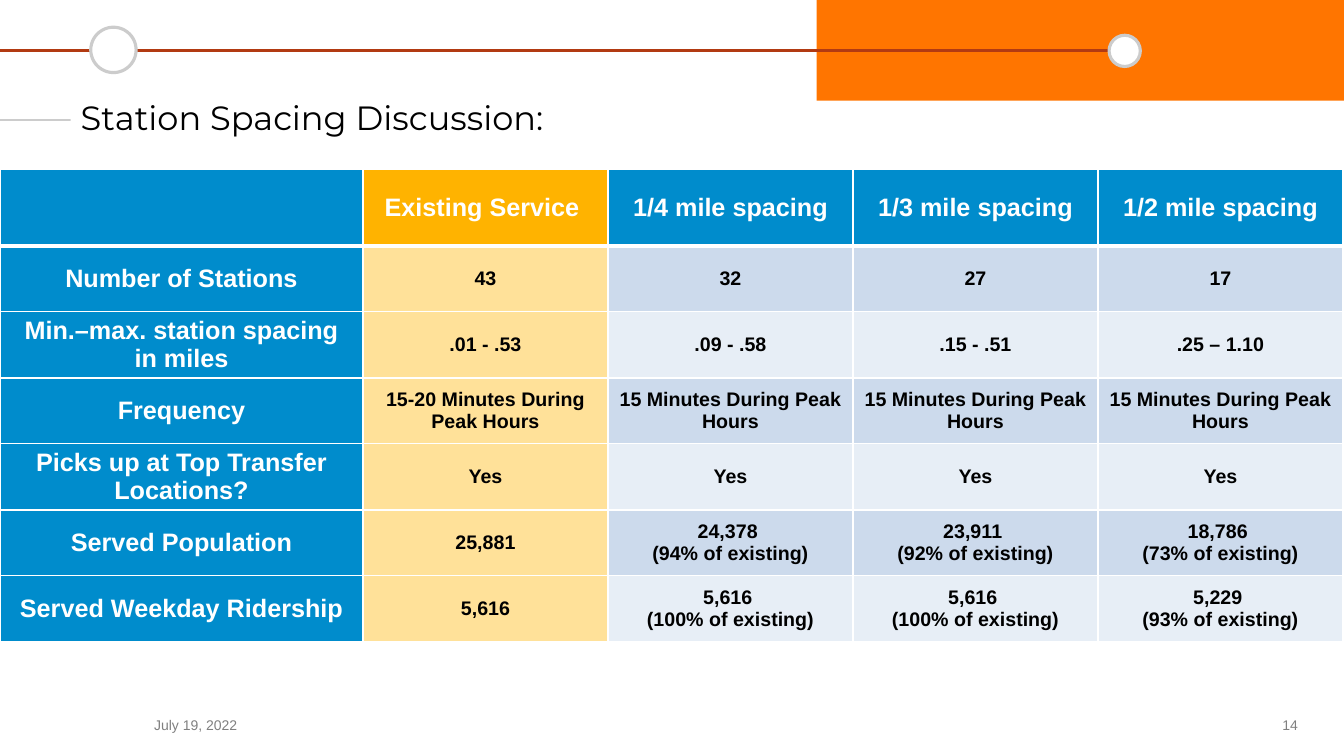
from pptx import Presentation
from pptx.dml.color import RGBColor
from pptx.enum.shapes import MSO_CONNECTOR, MSO_SHAPE
from pptx.enum.text import MSO_ANCHOR, MSO_AUTO_SIZE, PP_ALIGN
from pptx.oxml.ns import qn
from pptx.util import Emu, Pt
from lxml.etree import SubElement

PX = 9144  # 100 px to the inch
WHITE, BLACK, GREY, SILVER = "FFFFFF", "000000", "808080", "CCCCCC"
ORANGE, RUST = "FF7500", "B23A12"
BLUE, AMBER, PALE_AMBER = "008CCC", "FFB300", "FFE199"
BAND_FILLS = ["CCDAEC", "E7EEF6"]

COLUMN_WIDTHS = [360] + [243] * 4
ROW_HEIGHTS = [76] + [65] * 6
PEAK = "15 Minutes During Peak Hours"
ROWS = [
    ["", "Existing Service ", "1/4 mile spacing", "1/3 mile spacing", "1/2 mile spacing"],
    ["Number of Stations", "43", "32", "27", "17"],
    ["Min.–max. station spacing in miles", ".01 - .53", ".09 - .58", ".15 - .51", ".25 – 1.10"],
    ["Frequency", "15-20 Minutes During Peak Hours", PEAK, PEAK, PEAK],
    ["Picks up at Top Transfer Locations?", "Yes", "Yes", "Yes", "Yes"],
    ["Served Population", "25,881", "24,378 \n(94% of existing)",
     "23,911 \n(92% of existing)", "18,786 \n(73% of existing)"],
    ["Served Weekday Ridership", "5,616", "5,616 \n(100% of existing)",
     "5,616 \n(100% of existing)", "5,229 \n(93% of existing)"],
]


def px(*lengths):
    return [Emu(length * PX) for length in lengths]


def color(hex_string):
    return RGBColor.from_string(hex_string)


def apply_format(target, values):
    for name, value in values.items():
        setattr(target, name, value)


def cell_fill(row, column):
    if column == 0:
        return BLUE
    if row == 0:
        return AMBER if column == 1 else BLUE
    return PALE_AMBER if column == 1 else BAND_FILLS[(row - 1) % 2]


class SlideBuilder:
    font = "Arial"
    title_font = "Montserrat"

    def __init__(self, slide):
        self.slide = slide
        self.shapes = slide.shapes

    def set_text(self, frame, text, size, text_color, font=None, bold=False, **paragraph_format):
        apply_format(frame, {"text": text, "word_wrap": True,
                             "vertical_anchor": MSO_ANCHOR.MIDDLE})
        for paragraph in frame.paragraphs:
            apply_format(paragraph, paragraph_format)
            apply_format(paragraph.font, {"name": font or self.font, "size": Pt(size), "bold": bold})
            paragraph.font.color.rgb = color(text_color)

    def shape(self, kind, box, fill, line=None, width=2.25):
        shape = self.shapes.add_shape(kind, *px(*box))
        shape.shadow.inherit = False
        shape.fill.solid()
        shape.fill.fore_color.rgb = color(fill)
        if line:
            shape.line.color.rgb = color(line)
            shape.line.width = Pt(width)
        else:
            shape.line.fill.background()

    def line(self, start, end, line_color, width):
        connector = self.shapes.add_connector(MSO_CONNECTOR.STRAIGHT, *px(*start, *end))
        connector.line.color.rgb = color(line_color)
        connector.line.width = Pt(width)
        SubElement(connector._element.spPr, qn("a:effectLst"))

    def text(self, box, text, align):
        text_box = self.shapes.add_textbox(*px(*box))
        self.set_text(text_box.text_frame, text, 10, GREY, alignment=align)

    def title(self, box, text):
        title = self.shapes.title
        apply_format(title, dict(zip(("left", "top", "width", "height"), px(*box))))
        title.fill.solid()
        title.fill.fore_color.rgb = color(WHITE)
        self.set_text(title.text_frame, text, 24, BLACK, self.title_font,
                      alignment=PP_ALIGN.LEFT, line_spacing=0.9)
        title.text_frame.auto_size = MSO_AUTO_SIZE.NONE
        # Bring the title in front of the line that leads to it.
        self.shapes._spTree.append(title._element)

    def border(self, cell, side, width):
        line = SubElement(cell._tc.get_or_add_tcPr(), qn(f"a:ln{side}"), w=str(Pt(width)))
        fill = SubElement(line, qn("a:solidFill"))
        SubElement(fill, qn("a:srgbClr"), val=WHITE)

    def table(self, box, rows):
        table = self.shapes.add_table(len(rows), len(rows[0]), *px(*box)).table
        for column, width in zip(table.columns, px(*COLUMN_WIDTHS)):
            column.width = width
        for row, height in zip(table.rows, px(*ROW_HEIGHTS)):
            row.height = height
        for r, values in enumerate(rows):
            for c, value in enumerate(values):
                self.cell(table.cell(r, c), value, r, c)

    def cell(self, cell, text, row, column):
        heading = row == 0 or column == 0
        self.set_text(cell.text_frame, text, 18 if heading else 14,
                      WHITE if heading else BLACK, bold=True, alignment=PP_ALIGN.CENTER)
        cell.vertical_anchor = MSO_ANCHOR.MIDDLE
        widths = {"L": 1, "R": 1, "T": 3 if row == 1 else 1, "B": 3 if row == 0 else 1}
        for side, width in widths.items():
            self.border(cell, side, width)
        cell.fill.solid()
        cell.fill.fore_color.rgb = color(cell_fill(row, column))


def main():
    presentation = Presentation()
    presentation.slide_width, presentation.slide_height = px(1333, 750)
    builder = SlideBuilder(presentation.slides.add_slide(presentation.slide_layouts[5]))

    builder.shape(MSO_SHAPE.RECTANGLE, (810, 0, 523, 100), ORANGE)
    builder.line((0, 50), (1100, 50), RUST, 2.25)
    for box in [(1100, 35, 31, 31), (90, 27, 45, 45)]:
        builder.shape(MSO_SHAPE.OVAL, box, WHITE, SILVER)
    builder.line((135, 119), (0, 119), SILVER, 1.5)
    builder.text((143, 699, 182, 40), "July 19, 2022", PP_ALIGN.LEFT)
    builder.text((1257, 699, 45, 40), "14", PP_ALIGN.CENTER)
    builder.title((70, 85, 597, 67), "Station Spacing Discussion:")
    builder.table((0, 168, sum(COLUMN_WIDTHS), sum(ROW_HEIGHTS)), ROWS)
    presentation.save("out.pptx")


if __name__ == "__main__":
    main()
